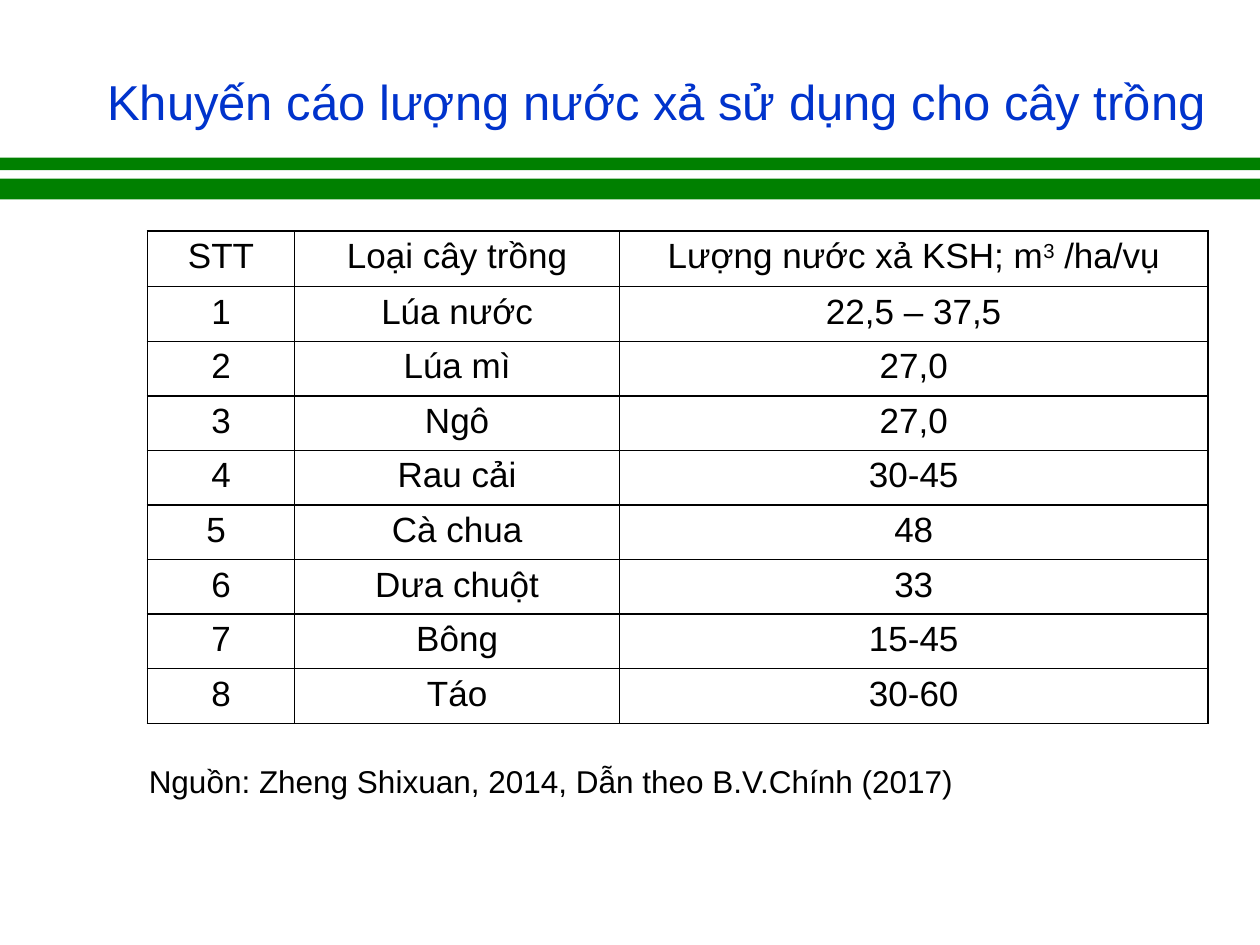
from lxml import etree
from pptx import Presentation
from pptx.dml.color import RGBColor
from pptx.enum import shapes, text
from pptx.oxml import ns
from pptx.util import Cm, Pt

BLACK = RGBColor(0x00, 0x00, 0x00)
GREEN = RGBColor(0x00, 0x80, 0x00)
BLUE = RGBColor(0x00, 0x33, 0xCC)

SLIDE_WIDTH, SLIDE_HEIGHT = 25.4, 19.05
COLUMN_WIDTHS = [2.97, 6.55, 11.86]
HEADER_HEIGHT, ROW_HEIGHT = 1.12, 1.1

HEADER = ["STT", "Loại cây trồng", "Lượng nước xả KSH; m^3^ /ha/vụ"]
CROPS = [
    ("1", "Lúa nước", "22,5 – 37,5"),
    ("2", "Lúa mì", "27,0"),
    ("3", "Ngô", "27,0"),
    ("4", "Rau cải", "30-45"),
    ("5 ", "Cà chua", "48"),
    ("6", "Dưa chuột", "33"),
    ("7", "Bông", "15-45"),
    ("8", "Táo", "30-60"),
]


def write(frame, content, size, color=BLACK, align=text.PP_ALIGN.LEFT, spacing=None):
    """Write one paragraph; a part between ^ marks is superscript."""
    paragraph = frame.paragraphs[0]
    paragraph.alignment = align
    paragraph.line_spacing = spacing
    for index, part in enumerate(content.split("^")):
        run = paragraph.add_run()
        run.text = part
        run.font.name = "Arial"
        run.font.size = Pt(size)
        run.font.color.rgb = color
        if index % 2:
            run._r.get_or_add_rPr().set("baseline", "30000")


def place(shape, left, top, width, height):
    shape.left, shape.top = Cm(left), Cm(top)
    shape.width, shape.height = Cm(width), Cm(height)


def add_title(slide, content):
    title = slide.shapes.title
    place(title, 1.06, 0.64, 24.34, 2.11)
    title.text_frame.vertical_anchor = text.MSO_ANCHOR.BOTTOM
    write(title.text_frame, content, size=28, color=BLUE, align=text.PP_ALIGN.CENTER)


def add_band(slide, top, height):
    band = slide.shapes.add_shape(
        shapes.MSO_SHAPE.RECTANGLE, 0, Cm(top), Cm(SLIDE_WIDTH), Cm(height))
    band.fill.solid()
    band.fill.fore_color.rgb = GREEN
    band.line.fill.background()
    band.shadow.inherit = False


def set_borders(cell):
    properties = cell._tc.get_or_add_tcPr()
    for position, side in enumerate(("a:lnL", "a:lnR", "a:lnT", "a:lnB")):
        border = etree.Element(ns.qn(side), w=str(Pt(1)))
        fill = etree.SubElement(border, ns.qn("a:solidFill"))
        etree.SubElement(fill, ns.qn("a:srgbClr"), val=str(BLACK))
        properties.insert(position, border)


def format_cell(cell, content):
    cell.margin_left = cell.margin_right = Cm(0.18)
    cell.margin_top = cell.margin_bottom = 0
    cell.fill.background()
    set_borders(cell)
    write(cell.text_frame, content, size=20, align=text.PP_ALIGN.CENTER, spacing=1.15)


def add_crop_table(slide, left, top):
    rows = [HEADER, *CROPS]
    heights = [HEADER_HEIGHT] + [ROW_HEIGHT] * len(CROPS)
    table = slide.shapes.add_table(
        len(rows), len(COLUMN_WIDTHS), Cm(left), Cm(top),
        Cm(sum(COLUMN_WIDTHS)), Cm(sum(heights))).table
    table.horz_banding = False
    table.first_row = False
    for column, width in zip(table.columns, COLUMN_WIDTHS):
        column.width = Cm(width)
    for row, height, values in zip(table.rows, heights, rows):
        row.height = Cm(height)
        for cell, value in zip(row.cells, values):
            format_cell(cell, value)


def add_source(slide, content):
    source = slide.shapes.add_textbox(Cm(2.75), Cm(15.24), Cm(19.69), Cm(1.02))
    source.text_frame.word_wrap = True
    source.text_frame.auto_size = text.MSO_AUTO_SIZE.SHAPE_TO_FIT_TEXT
    write(source.text_frame, content, size=18)


def main():
    deck = Presentation()
    deck.slide_width, deck.slide_height = Cm(SLIDE_WIDTH), Cm(SLIDE_HEIGHT)
    slide = deck.slides.add_slide(deck.slide_layouts[5])

    # Heading with its two green bands
    add_band(slide, top=3.18, height=0.25)
    add_band(slide, top=3.6, height=0.42)
    add_title(slide, "Khuyến cáo lượng nước xả sử dụng cho cây trồng")

    # Recommended amounts and their source
    add_crop_table(slide, left=2.97, top=4.66)
    add_source(slide, "Nguồn: Zheng Shixuan, 2014, Dẫn theo B.V.Chính (2017)")

    deck.save("out.pptx")


if __name__ == "__main__":
    main()
